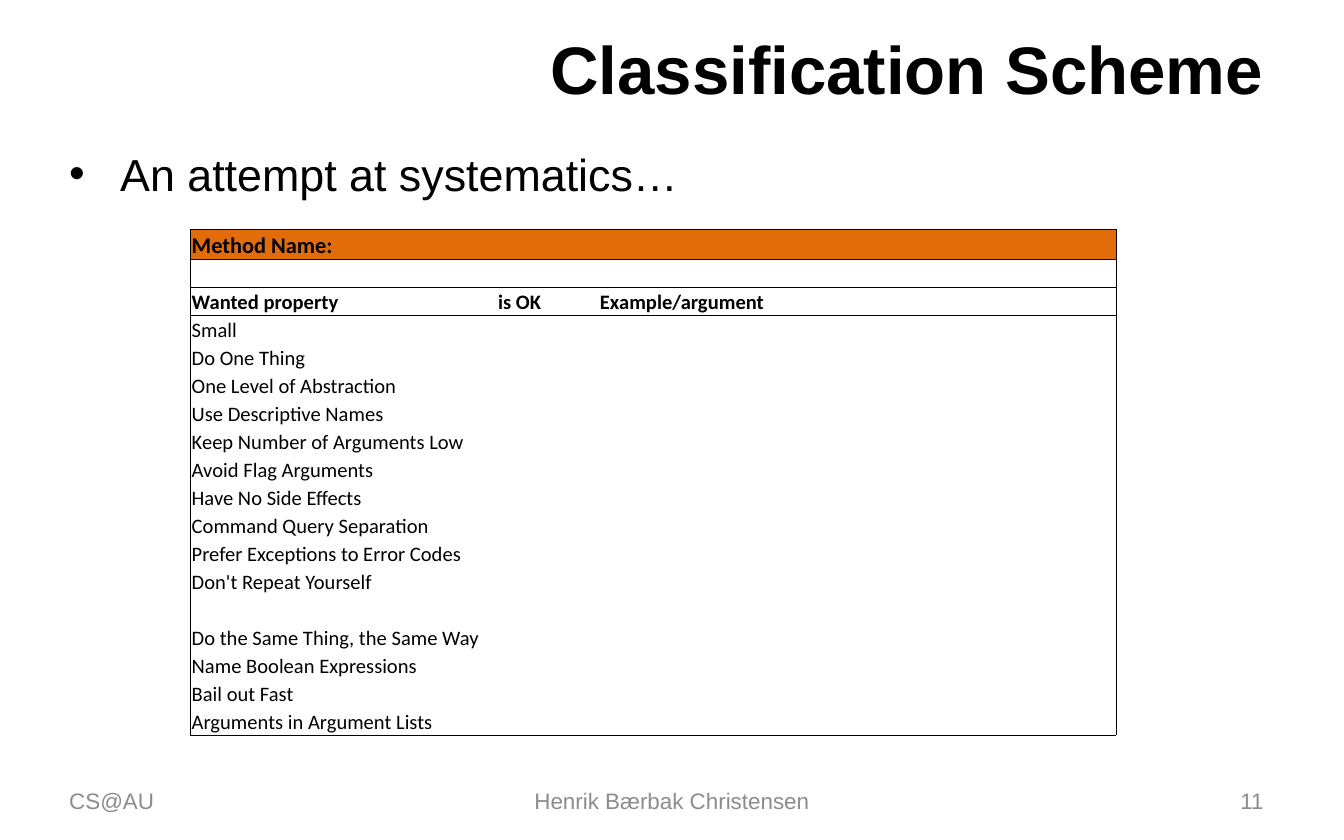
from lxml.etree import SubElement
from pptx import Presentation
from pptx.dml.color import RGBColor
from pptx.enum.text import MSO_ANCHOR, PP_ALIGN
from pptx.oxml.ns import qn
from pptx.util import Inches, Pt

UNIT = 10 / 24  # the slide is a grid of 24 columns by 15 rows
BLACK, GREY, ORANGE = "000000", "8C8C8C", "E26B0A"

COLUMN_WIDTHS = [5.47, 1.82, 9.24]
HEADING_ROWS = [
    ["Method Name:", "", ""],
    ["", "", ""],
    ["Wanted property", "is OK", "Example/argument"],
]
PROPERTIES = [
    "Small",
    "Do One Thing",
    "One Level of Abstraction",
    "Use Descriptive Names",
    "Keep Number of Arguments Low",
    "Avoid Flag Arguments",
    "Have No Side Effects",
    "Command Query Separation",
    "Prefer Exceptions to Error Codes",
    "Don't Repeat Yourself",
    "",
    "Do the Same Thing, the Same Way",
    "Name Boolean Expressions",
    "Bail out Fast",
    "Arguments in Argument Lists",
]


def grid(units):
    return Inches(units * UNIT)


def color(hex_code):
    return RGBColor.from_string(hex_code)


class SlideBuilder:
    def __init__(self, page, font="Arial"):
        self.page = page
        self.font = font

    def style(self, para, size, hex_code=BLACK, bold=False, font=None):
        para.font.name = font or self.font
        para.font.size = Pt(size)
        para.font.bold = bold
        para.font.color.rgb = color(hex_code)

    def text(self, content, area, size, hex_code=BLACK, bold=False,
             align=PP_ALIGN.LEFT, anchor=MSO_ANCHOR.MIDDLE, bullet=None):
        """Place one paragraph in area: left, top, width, height in grid units."""
        box = self.page.shapes.add_textbox(*map(grid, area))
        frame = box.text_frame
        frame.word_wrap = True
        frame.vertical_anchor = anchor
        para = frame.paragraphs[0]
        para.text = content
        para.alignment = align
        if bullet:
            properties = para._p.get_or_add_pPr()
            properties.set("marL", str(Inches(0.38)))
            properties.set("indent", str(-Inches(0.38)))
            SubElement(properties, qn("a:buFont"), typeface=self.font)
            SubElement(properties, qn("a:buChar"), char=bullet)
        self.style(para, size, hex_code, bold)

    def borders(self, cell, sides):
        """Draw the listed sides (L, R, T, B) and clear the others."""
        properties = cell._tc.get_or_add_tcPr()
        for side in "LRTB":
            line = SubElement(properties, qn(f"a:ln{side}"), w=str(Pt(0.5)))
            if side in sides:
                fill = SubElement(line, qn("a:solidFill"))
                SubElement(fill, qn("a:srgbClr"), val=BLACK)
            else:
                SubElement(line, qn("a:noFill"))

    def cell(self, cell, content, size, bold, sides, fill=None):
        cell.margin_left = cell.margin_right = cell.margin_top = Inches(0.01)
        cell.margin_bottom = 0
        cell.vertical_anchor = MSO_ANCHOR.BOTTOM
        para = cell.text_frame.paragraphs[0]
        if content:
            para.text = content
        self.style(para, size, bold=bold, font="Calibri")
        if not content:
            SubElement(para._p, qn("a:endParaRPr"), sz=str(size * 100))
        self.borders(cell, sides)
        if fill:
            cell.fill.solid()
            cell.fill.fore_color.rgb = color(fill)
        else:
            cell.fill.background()

    def checklist(self, left, top, widths, headings, properties):
        """Ruled heading rows above an open list of properties in one frame."""
        rows = headings + [[name, "", ""] for name in properties]
        heights = [0.53] + [0.5] * (len(rows) - 1)
        table = self.page.shapes.add_table(
            len(rows), len(widths), grid(left), grid(top),
            grid(sum(widths)), grid(sum(heights))).table
        table.first_row = table.horz_banding = False
        for column, width in zip(table.columns, widths):
            column.width = grid(width)
        for i, (row, height) in enumerate(zip(rows, heights)):
            table.rows[i].height = grid(height)
            is_heading = i < len(headings)
            ruled = "T" if i <= len(headings) else ""
            if is_heading or i == len(rows) - 1:
                ruled += "B"
            for j, content in enumerate(row):
                outer = {0: "L", len(widths) - 1: "R"}.get(j, "")
                self.cell(table.cell(i, j), content, 12 if i == 0 else 11,
                          is_heading, ruled + outer,
                          ORANGE if i == 0 else None)

    def footer(self, content, left, width, align):
        self.text(content, (left, 13.9, width, 0.8), 12, GREY, align=align)


def main():
    deck = Presentation()
    deck.slide_width, deck.slide_height = grid(24), grid(15)
    builder = SlideBuilder(deck.slides.add_slide(deck.slide_layouts[6]))

    builder.text("Classification Scheme", (1.2, 0.43, 21.6, 1.56), 36,
                 bold=True, align=PP_ALIGN.RIGHT)
    builder.checklist(3.4, 4.1, COLUMN_WIDTHS, HEADING_ROWS, PROPERTIES)
    builder.text("An attempt at systematics…", (1, 2.5, 21.8, 11.33), 24,
                 anchor=MSO_ANCHOR.TOP, bullet="•")
    builder.footer("CS@AU", 1, 5.6, PP_ALIGN.LEFT)
    builder.footer("Henrik Bærbak Christensen", 8.2, 7.6, PP_ALIGN.CENTER)
    builder.footer("11", 17.2, 5.6, PP_ALIGN.RIGHT)

    deck.save("out.pptx")


if __name__ == "__main__":
    main()
